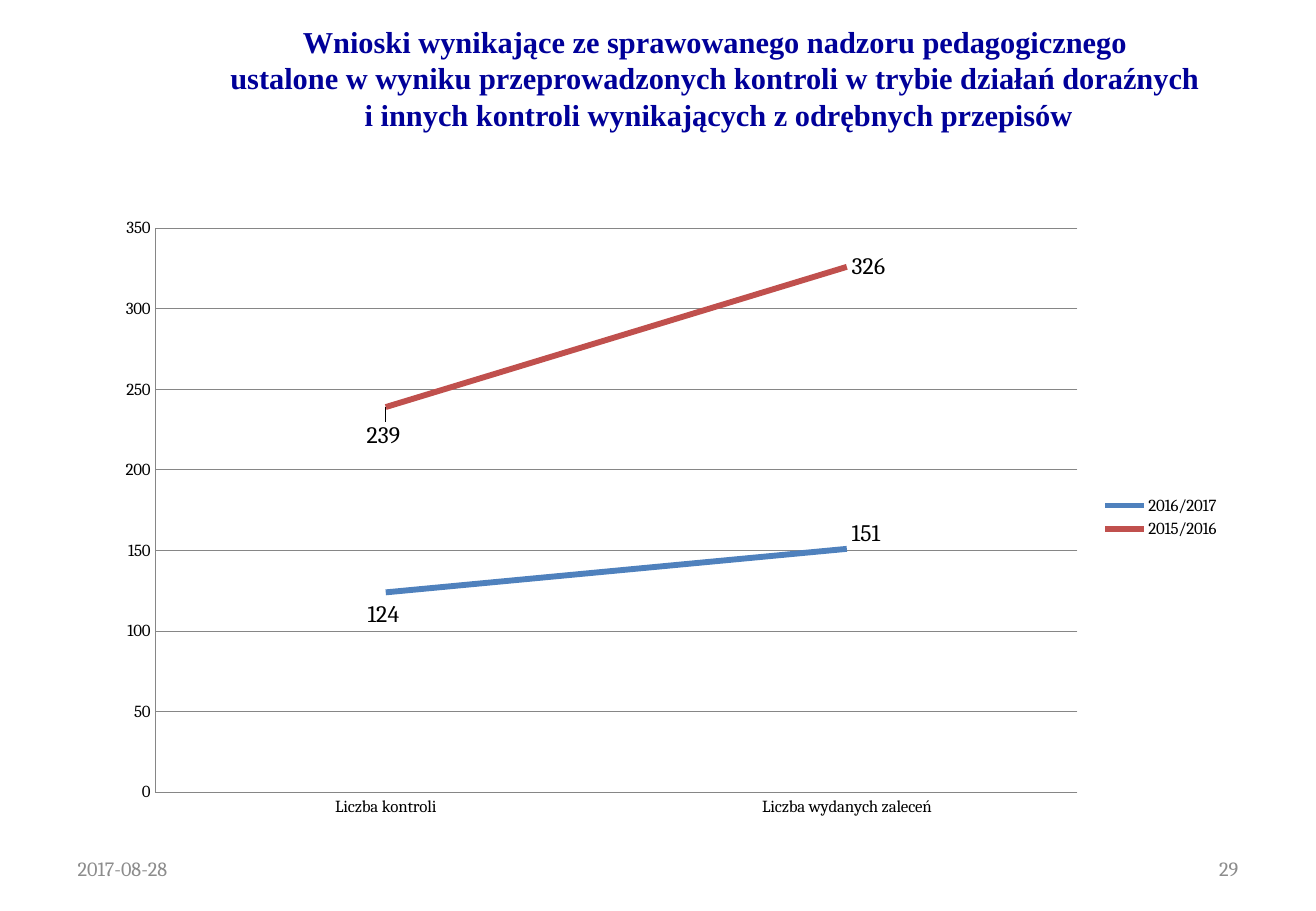
"""Builds the slide comparing inspections and recommendations in two school years."""
from lxml.etree import SubElement
from pptx import Presentation
from pptx.chart.data import CategoryChartData
from pptx.dml.color import RGBColor
from pptx.enum.chart import XL_CHART_TYPE as ChartType, XL_LABEL_POSITION as LabelPos
from pptx.enum.chart import XL_LEGEND_POSITION as LegendPos, XL_MARKER_STYLE as Marker
from pptx.enum.chart import XL_TICK_MARK as Tick
from pptx.enum.text import MSO_ANCHOR as Anchor, PP_ALIGN as Align
from pptx.oxml.ns import qn
from pptx.util import Inches, Pt

COLORS = {"title": "000099", "footer": "8C8C8C", "text": "000000", "grid": "868686",
          "2016/2017": "4F81BD", "2015/2016": "C0504D"}
TITLE = ("Wnioski wynikające ze sprawowanego nadzoru pedagogicznego \v"
         "ustalone w wyniku przeprowadzonych kontroli w trybie działań doraźnych \v"
         "i innych kontroli wynikających z odrębnych przepisów")
CATEGORIES = ["Liczba kontroli", "Liczba wydanych zaleceń"]
INSPECTIONS = {"2016/2017": (124, 151), "2015/2016": (239, 326)}
LABEL_SHIFTS = {"2016/2017": ((-0.2, 0.6), (0, -2.4)), "2015/2016": ((-0.2, 1.6), None)}


class SlideBuilder:
    """Holds the text style and the current slide."""

    def __init__(self, slide, font="Cambria"):
        self.slide = slide
        self.font = font

    def style(self, font, size, color, name=None, bold=False):
        font.name, font.size, font.bold = name or self.font, Pt(size), bold
        font.color.rgb = RGBColor.from_string(COLORS[color])

    def text(self, box, words, size, color, align=Align.LEFT, name=None, bold=False):
        frame = self.slide.shapes.add_textbox(*map(Inches, box)).text_frame
        frame.word_wrap, frame.vertical_anchor = True, Anchor.MIDDLE
        paragraph = frame.paragraphs[0]
        paragraph.text, paragraph.alignment = words, align
        self.style(paragraph.font, size, color, name, bold)

    def line(self, line, color, width):
        line.color.rgb = RGBColor.from_string(COLORS[color])
        line.width = Pt(width)

    def layout(self, parent, modes, **percents):
        manual = SubElement(parent, qn("c:manualLayout"))
        for tag, value in modes.items():
            SubElement(manual, qn(f"c:{tag}")).set("val", value)
        for tag, percent in percents.items():
            SubElement(manual, qn(f"c:{tag}")).set("val", str(percent / 100))

    def label(self, series, index, position, shift):
        label = series.points[index].data_label
        self.style(label.font, 14, "text")
        label.position = position
        if shift:
            element = series._element.xpath(f"c:dLbls/c:dLbl[c:idx/@val='{index}']")[0]
            holder = SubElement(element, qn("c:layout"))
            element.find(qn("c:idx")).addnext(holder)
            self.layout(holder, {}, x=shift[0], y=shift[1])

    def line_chart(self, box, categories, values, shifts):
        data = CategoryChartData()
        data.categories = categories
        for year, counts in values.items():
            data.add_series(year, counts)
        chart = self.slide.shapes.add_chart(ChartType.LINE, *map(Inches, box), data).chart
        self.style(chart.font, 10, "text")
        chart.has_title = False
        chart.has_legend = True
        chart.legend.position = LegendPos.RIGHT
        chart.legend.include_in_layout = False
        for axis in (chart.category_axis, chart.value_axis):
            axis.major_tick_mark = axis.minor_tick_mark = Tick.NONE
            self.line(axis.format.line, "grid", 0.5)
        scale = chart.value_axis
        scale.minimum_scale, scale.maximum_scale, scale.major_unit = 0, 350, 50
        scale.has_major_gridlines = True
        self.line(scale.major_gridlines.format.line, "grid", 0.5)
        plot = chart.plots[0]
        plot.vary_by_categories = False
        for series in plot.series:
            series.smooth = False
            series.marker.style = Marker.NONE
            self.line(series.format.line, series.name, 3.5)
            for index, position in enumerate((LabelPos.BELOW, LabelPos.RIGHT)):
                self.label(series, index, position, shifts[series.name][index])
        area = chart._chartSpace.chart.plotArea
        holder = area.find(qn("c:layout"))
        if holder is None:
            holder = SubElement(area, qn("c:layout"))
            area.insert(0, holder)
        self.layout(holder, {"layoutTarget": "inner", "xMode": "edge", "yMode": "edge"},
                    x=4.6, y=3.5, w=81.7, h=90.7)


def main():
    deck = Presentation()
    deck.slide_width, deck.slide_height = Inches(10.83), Inches(7.5)
    builder = SlideBuilder(deck.slides.add_slide(deck.slide_layouts[6]))
    builder.text((1.64, 0.13, 8.55, 1.02), TITLE, 18, "title", Align.CENTER,
                 "Times New Roman", True)
    builder.text((0.54, 6.95, 2.53, 0.4), "2017-08-28", 12, "footer")
    builder.text((7.76, 6.95, 2.53, 0.4), "29", 12, "footer", Align.RIGHT)
    builder.line_chart((0.85, 1.7, 9.29, 5.12), CATEGORIES, INSPECTIONS, LABEL_SHIFTS)
    deck.save("out.pptx")


if __name__ == "__main__":
    main()
